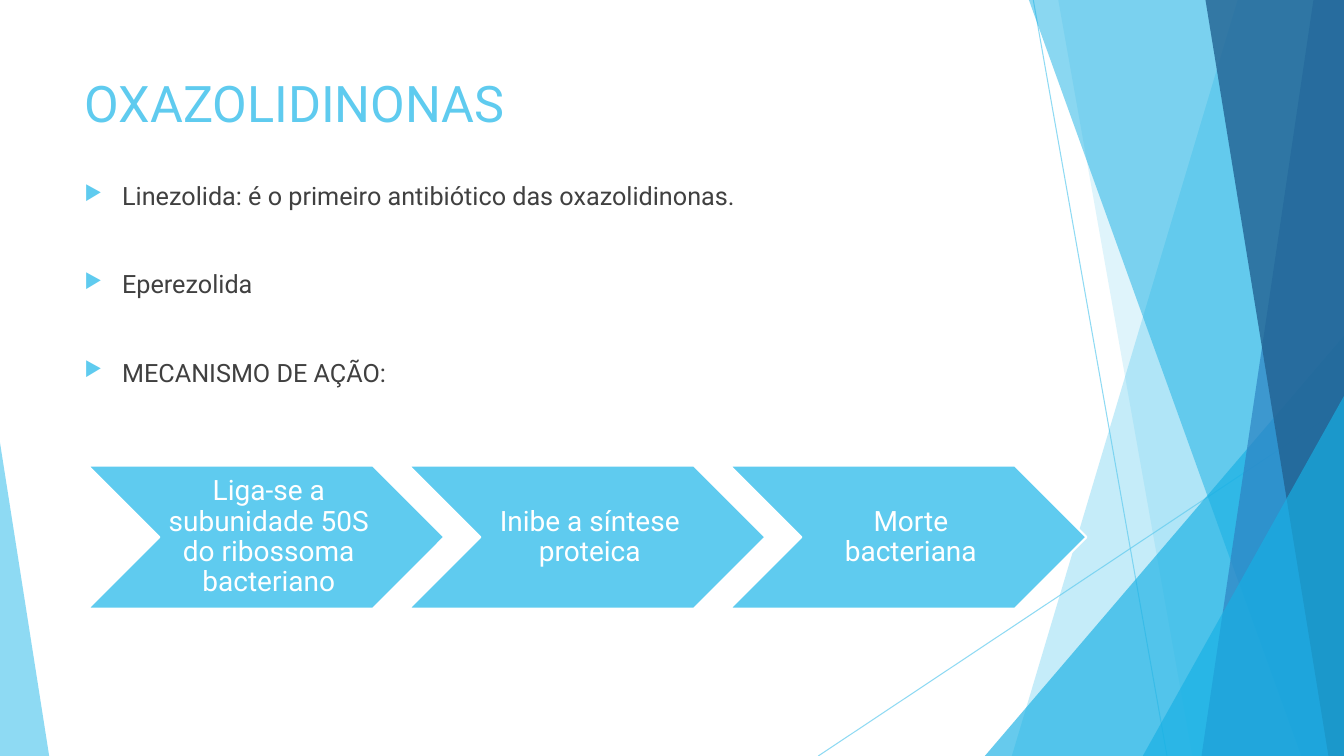
from dataclasses import dataclass

from lxml import etree
from pptx import Presentation
from pptx.dml.color import RGBColor
from pptx.enum.shapes import MSO_CONNECTOR, MSO_SHAPE
from pptx.enum.text import MSO_ANCHOR, MSO_AUTO_SIZE, PP_ALIGN
from pptx.oxml.ns import qn
from pptx.util import Cm, Pt

STRAIGHT = MSO_CONNECTOR.STRAIGHT
CHEVRON = MSO_SHAPE.CHEVRON
TRIANGLE = MSO_SHAPE.ISOSCELES_TRIANGLE
TOP, MIDDLE = MSO_ANCHOR.TOP, MSO_ANCHOR.MIDDLE
LEFT, CENTER = PP_ALIGN.LEFT, PP_ALIGN.CENTER
NO_FIT = MSO_AUTO_SIZE.NONE

WIDE, HIGH = 33.87, 19.05


@dataclass(frozen=True)
class Theme:
    face: str = "Roboto"
    light: str = "5FCBEF"
    sky: str = "17B0E4"
    blue: str = "2E83C3"
    navy: str = "226292"
    ink: str = "404040"
    white: str = "FFFFFF"
    title: float = 36
    body: float = 18
    step: float = 20


@dataclass(frozen=True)
class Ray:
    start: tuple[float, float]
    end: tuple[float, float]


@dataclass(frozen=True)
class Band:
    top: float
    base: float
    color: str
    alpha: int


@dataclass(frozen=True)
class Wedge:
    left: float
    top: float
    width: float
    peak: float
    color: str
    alpha: int


THEME = Theme()

RAYS = [
    Ray((26.04, 0), (29.41, HIGH)),
    Ray((WIDE, 10.24), (20.62, HIGH)),
]

FACETS = [
    Band(31.19, 25.5, THEME.light, 36),
    Band(26.67, 30.05, THEME.light, 20),
    Wedge(24.82, 8.46, 9.05, 1, THEME.sky, 66),
    Band(25.93, 32.79, THEME.sky, 50),
    Band(33.1, 30.28, THEME.blue, 70),
    Band(30.38, 33.48, THEME.navy, 80),
    Wedge(28.8, 9.98, 5.07, 1, THEME.sky, 66),
    Wedge(0, 11.15, 1.24, 0, THEME.light, 70),
]

POINTS = [
    "Linezolida: é o primeiro antibiótico das oxazolidinonas.",
    "Eperezolida",
    "MECANISMO DE AÇÃO:",
]

STEPS = [
    "Liga-se a subunidade 50S do ribossoma bacteriano",
    "Inibe a síntese proteica",
    "Morte bacteriana",
]


def fade(fill, alpha: int) -> None:
    tone = fill._xPr.find(".//" + qn("a:srgbClr"))
    etree.SubElement(tone, qn("a:alpha"), val=str(alpha * 1000))


def paint(shape, color: str, alpha: int = 100) -> None:
    shape.shadow.inherit = False
    shape.fill.solid()
    shape.fill.fore_color.rgb = RGBColor.from_string(color)
    if alpha < 100:
        fade(shape.fill, alpha)
    shape.line.fill.background()


def write(para, text: str, size: float, color: str) -> None:
    run = para.add_run()
    run.text = text
    run.font.name = THEME.face
    run.font.size = Pt(size)
    run.font.color.rgb = RGBColor.from_string(color)


def mark(para) -> None:
    props = para._p.get_or_add_pPr()
    props.set("marL", str(Cm(0.95)))
    props.set("indent", str(-Cm(0.95)))
    tint = etree.SubElement(props, qn("a:buClr"))
    etree.SubElement(tint, qn("a:srgbClr"), val=THEME.light)
    etree.SubElement(props, qn("a:buSzPct"), val="80000")
    etree.SubElement(props, qn("a:buChar"), char="▶")


def draw_ray(slide, ray: Ray) -> None:
    ends = [Cm(n) for n in ray.start + ray.end]
    line = slide.shapes.add_connector(STRAIGHT, *ends)
    line.line.width = Pt(0.75)
    line.line.color.rgb = RGBColor.from_string(THEME.light)
    fade(line.line.fill, 70)
    etree.SubElement(line._element.spPr, qn("a:effectLst"))


def draw_band(slide, band: Band) -> None:
    edge = [(WIDE, 0), (WIDE, HIGH), (band.base, HIGH)]
    form = slide.shapes.build_freeform(Cm(band.top), 0)
    form.add_line_segments([(Cm(x), Cm(y)) for x, y in edge], close=True)
    paint(form.convert_to_shape(), band.color, band.alpha)


def draw_wedge(slide, wedge: Wedge) -> None:
    shape = slide.shapes.add_shape(
        TRIANGLE, Cm(wedge.left), Cm(wedge.top),
        Cm(wedge.width), Cm(HIGH - wedge.top))
    shape.adjustments[0] = wedge.peak
    paint(shape, wedge.color, wedge.alpha)


def draw_title(slide, text: str) -> None:
    title = slide.shapes.title
    title.left, title.top = Cm(1.88), Cm(1.7)
    title.width, title.height = Cm(23.88), Cm(3.66)
    frame = title.text_frame
    frame.auto_size = NO_FIT
    frame.vertical_anchor = TOP
    para = frame.paragraphs[0]
    para.alignment = LEFT
    write(para, text, THEME.title, THEME.light)


def draw_points(slide, points: list[str]) -> None:
    box = slide.shapes.add_textbox(Cm(1.88), Cm(4.42), Cm(23.88), Cm(6.2))
    frame = box.text_frame
    frame.word_wrap = True
    for i, text in enumerate(points):
        para = frame.add_paragraph() if i else frame.paragraphs[0]
        if i:
            para.space_before = Pt(41.5)
        mark(para)
        write(para, text, THEME.body, THEME.ink)


def draw_step(slide, i: int, text: str) -> None:
    shape = slide.shapes.add_shape(
        CHEVRON, Cm(2.21 + 8.09 * i), Cm(11.73), Cm(8.99), Cm(3.61))
    paint(shape, THEME.light)
    shape.line.color.rgb = RGBColor.from_string(THEME.white)
    shape.line.width = Pt(1.5)
    frame = shape.text_frame
    frame.word_wrap = True
    frame.vertical_anchor = MIDDLE
    frame.margin_left = Cm(0.21)
    frame.margin_right = frame.margin_top = frame.margin_bottom = Cm(0.07)
    para = frame.paragraphs[0]
    para.alignment = CENTER
    para.line_spacing = 0.9
    write(para, text, THEME.step, THEME.white)


def main() -> None:
    deck = Presentation()
    deck.slide_width, deck.slide_height = Cm(WIDE), Cm(HIGH)
    slide = deck.slides.add_slide(deck.slide_layouts[5])
    for ray in RAYS:
        draw_ray(slide, ray)
    for facet in FACETS:
        if isinstance(facet, Band):
            draw_band(slide, facet)
        else:
            draw_wedge(slide, facet)
    draw_title(slide, "OXAZOLIDINONAS")
    draw_points(slide, POINTS)
    for i, text in enumerate(STEPS):
        draw_step(slide, i, text)
    deck.save("out.pptx")


if __name__ == "__main__":
    main()
